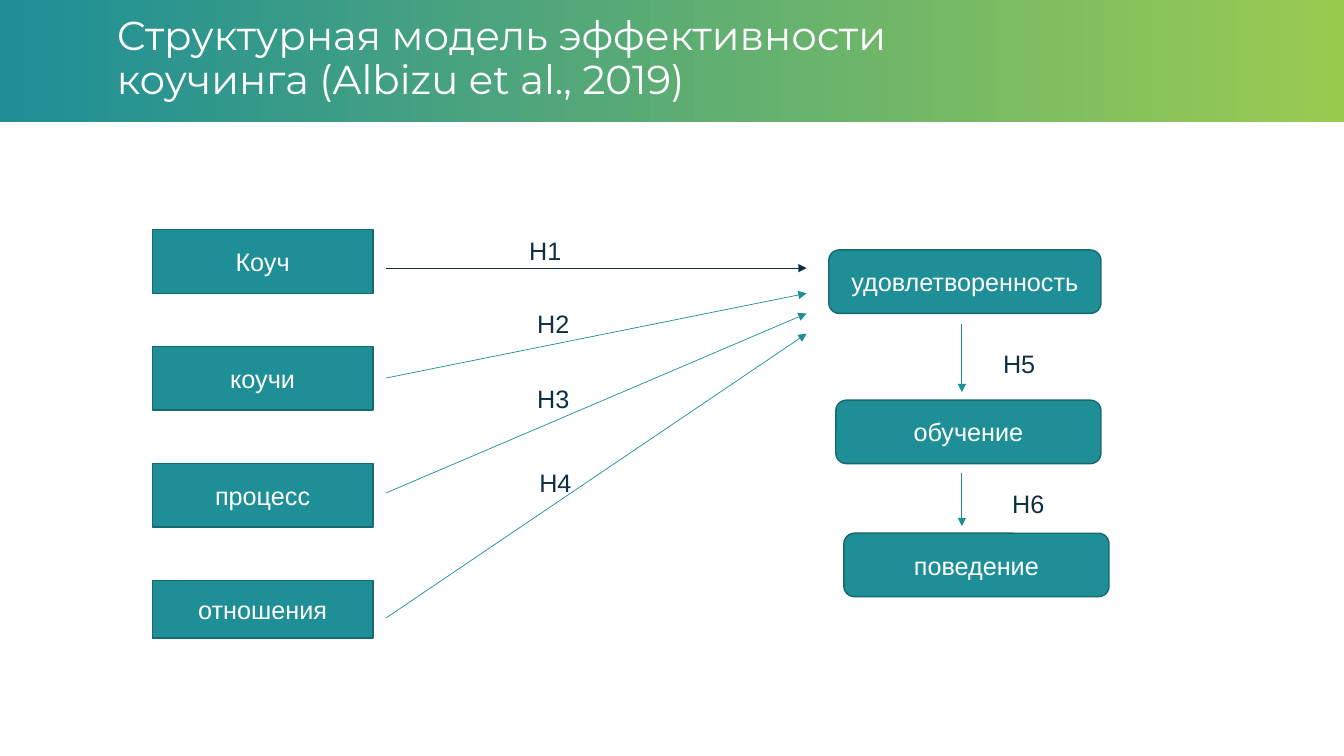
from lxml import etree
from pptx import Presentation, util as u
from pptx.dml.color import RGBColor
from pptx.enum import shapes, text
from pptx.oxml.ns import qn

PX = 9144  # EMU per px, 100 px to the inch
TEAL = RGBColor(0x1E, 0x8E, 0x97)
DARK_TEAL = RGBColor(0x16, 0x69, 0x70)
GREEN = RGBColor(0x9A, 0xCB, 0x51)
NAVY = RGBColor(0x0F, 0x30, 0x43)
WHITE = RGBColor(0xFF, 0xFF, 0xFF)

RECTANGLE = shapes.MSO_SHAPE.RECTANGLE
ROUNDED = shapes.MSO_SHAPE.ROUNDED_RECTANGLE

SLIDE_WIDTH, SLIDE_HEIGHT = 1333, 750
BOX_HEIGHT = 63
FACTOR_TOP, FACTOR_STEP = 228, 116
FACTORS = [("Коуч", BOX_HEIGHT), ("коучи", BOX_HEIGHT), ("процесс", BOX_HEIGHT), ("отношения", 57)]
OUTCOMES = [
    ("удовлетворенность", 822, 248, 270),
    ("обучение", 829, 397, 263),
    ("поведение", 837, 529, 263),
]
ARROW_LEFT, ARROW_RIGHT, OUTCOME_ARROW_X = 383, 800, 954
# label, label left and top, arrow start, arrow end, colour
HYPOTHESES = [
    ("H1", 515, 228, (ARROW_LEFT, 266), (ARROW_RIGHT, 266), NAVY),
    ("H2", 523, 301, (ARROW_LEFT, 375), (ARROW_RIGHT, 291), TEAL),
    ("H3", 523, 375, (ARROW_LEFT, 489), (ARROW_RIGHT, 311), TEAL),
    ("H4", 525, 459, (ARROW_LEFT, 613), (ARROW_RIGHT, 331), TEAL),
    ("H5", 985, 341, (OUTCOME_ARROW_X, 321), (OUTCOME_ARROW_X, 389), TEAL),
    ("H6", 994, 479, (OUTCOME_ARROW_X, 469), (OUTCOME_ARROW_X, 522), TEAL),
]


def px(*lengths):
    return [u.Emu(length * PX) for length in lengths]


class SlideBuilder:
    """Holds the text style and the slide being built."""

    body_font, title_font = "Arial", "Montserrat"
    body_size, title_size = 18, 28.8

    def __init__(self, slide):
        self.slide = slide

    def set_text(self, shape, words, color, align, font=body_font, size=body_size):
        frame = shape.text_frame
        frame.text = words
        frame.vertical_anchor = text.MSO_ANCHOR.MIDDLE
        paragraph = frame.paragraphs[0]
        paragraph.alignment = align
        run_font = paragraph.runs[0].font
        run_font.name, run_font.size = font, u.Pt(size)
        run_font.color.rgb = color
        return paragraph

    def header(self, words):
        """Gradient band with the slide title on top of it."""
        band = self.slide.shapes.add_shape(RECTANGLE, *px(0, 0, SLIDE_WIDTH, 121))
        band.shadow.inherit = False
        band.line.fill.background()
        band.fill.gradient()
        band.fill.gradient_angle = 0
        for stop, color in zip(band.fill.gradient_stops, (TEAL, GREEN)):
            stop.color.rgb = color

        title = self.slide.shapes.title
        title.left, title.top, title.width, title.height = px(106, 19, 940, 80)
        paragraph = self.set_text(title, words, WHITE, text.PP_ALIGN.LEFT,
                                  self.title_font, self.title_size)
        paragraph.line_spacing = 0.9
        title.text_frame.word_wrap = True
        title.text_frame.auto_size = text.MSO_AUTO_SIZE.NONE
        band.element.addnext(title.element)

    def box(self, kind, words, left, top, width, height=BOX_HEIGHT):
        shape = self.slide.shapes.add_shape(kind, *px(left, top, width, height))
        shape.shadow.inherit = False
        shape.fill.solid()
        shape.fill.fore_color.rgb = TEAL
        shape.line.color.rgb = DARK_TEAL
        shape.line.width = u.Pt(1)
        self.set_text(shape, words, WHITE, text.PP_ALIGN.CENTER)

    def arrow(self, start, end, color):
        connector = self.slide.shapes.add_connector(
            shapes.MSO_CONNECTOR.STRAIGHT, *px(*start, *end))
        connector.line.color.rgb = color
        connector.line.width = u.Pt(0.5)
        properties = connector.element.spPr
        etree.SubElement(properties.find(qn("a:ln")), qn("a:tailEnd"), type="triangle")
        etree.SubElement(properties, qn("a:effectLst"))

    def label(self, words, left, top):
        shape = self.slide.shapes.add_textbox(*px(left, top, 52, 40))
        shape.text_frame.word_wrap = False
        shape.text_frame.auto_size = text.MSO_AUTO_SIZE.SHAPE_TO_FIT_TEXT
        self.set_text(shape, words, NAVY, text.PP_ALIGN.LEFT)


def main():
    presentation = Presentation()
    presentation.slide_width, presentation.slide_height = px(SLIDE_WIDTH, SLIDE_HEIGHT)
    title_only = presentation.slide_layouts.get_by_name("Title Only")
    builder = SlideBuilder(presentation.slides.add_slide(title_only))

    builder.header("Структурная модель эффективности коучинга (Albizu et al., 2019)")
    for row, (words, height) in enumerate(FACTORS):
        builder.box(RECTANGLE, words, 151, FACTOR_TOP + row * FACTOR_STEP, 219, height)
    for outcome in OUTCOMES:
        builder.box(ROUNDED, *outcome)
    for words, left, top, start, end, color in HYPOTHESES:
        builder.arrow(start, end, color)
        builder.label(words, left, top)

    presentation.save("out.pptx")


if __name__ == "__main__":
    main()
